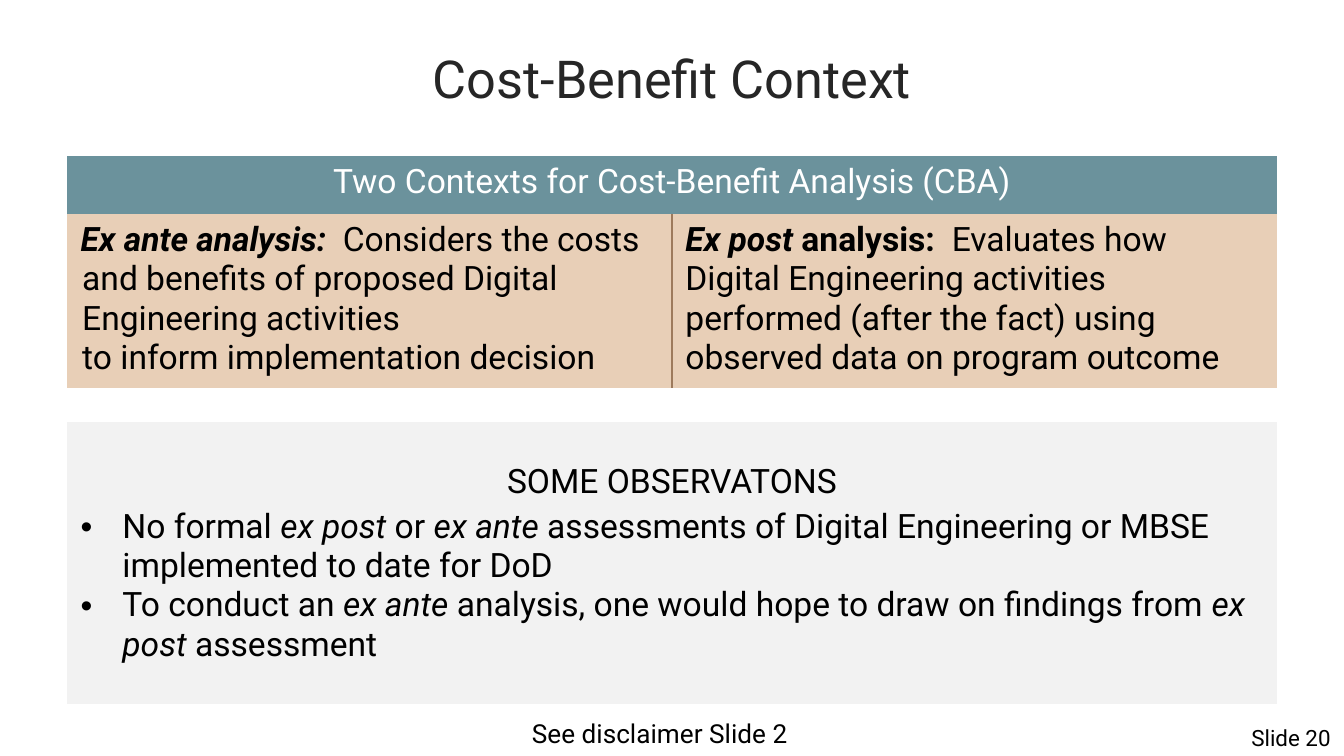
from typing import NamedTuple

from lxml.etree import SubElement
from pptx import Presentation
from pptx.dml.color import RGBColor
from pptx.enum.text import MSO_ANCHOR, PP_ALIGN
from pptx.oxml.ns import qn
from pptx.util import Cm, Pt

BLACK = RGBColor(0x00, 0x00, 0x00)
CHARCOAL = RGBColor(0x26, 0x26, 0x26)
WHITE = RGBColor(0xFF, 0xFF, 0xFF)
TEAL = RGBColor(0x6B, 0x92, 0x9C)
SAND = RGBColor(0xE8, 0xCF, 0xB7)
BROWN = RGBColor(0x9D, 0x7A, 0x5C)
PALE_GREY = RGBColor(0xF2, 0xF2, 0xF2)

FONT = "Roboto"
BODY_SIZE = 18
BULLET_INDENT = Cm(0.79)
COLUMN_WIDTH = Cm(11.43)
ROW_HEIGHTS = [Cm(1.09), Cm(3.23), Cm(0.64), Cm(5.33)]
NO_STYLE_NO_GRID = "{2D5ABB26-0587-4C30-8999-92F81FD0307C}"


class Part(NamedTuple):
    text: str
    bold: bool = False
    italic: bool = False


class Label(NamedTuple):
    text: str
    left: float
    top: float
    width: float
    height: float
    size: int
    align: PP_ALIGN
    color: RGBColor = BLACK
    anchor: MSO_ANCHOR = MSO_ANCHOR.TOP


LABELS = [
    Label("Cost-Benefit Context", 1.27, 0, 22.86, 2.95, 28, PP_ALIGN.CENTER,
          CHARCOAL, MSO_ANCHOR.MIDDLE),
    Label("See disclaimer Slide 2", 7.21, 13.44, 10.52, 0.86, 14, PP_ALIGN.CENTER),
    Label("Slide 20", 13.89, 13.56, 11.51, 0.76, 12, PP_ALIGN.RIGHT),
]

CONTEXTS = [
    [
        Part("Ex ante analysis:  ", bold=True, italic=True),
        Part("Considers the costs and benefits of proposed Digital "
             "Engineering activities \nto inform implementation decision"),
    ],
    [
        Part("Ex post ", bold=True, italic=True),
        Part("analysis:  ", bold=True),
        Part("Evaluates how Digital Engineering activities performed "
             "(after the fact) using observed data on program outcome"),
    ],
]

OBSERVATIONS = [
    [
        Part("No formal "),
        Part("ex post ", italic=True),
        Part("or "),
        Part("ex ante ", italic=True),
        Part("assessments of Digital Engineering or MBSE implemented to date for DoD"),
    ],
    [
        Part("To conduct an "),
        Part("ex ante ", italic=True),
        Part("analysis, one would hope to draw on findings from "),
        Part("ex post ", italic=True),
        Part("assessment"),
    ],
]


def style_run(run, size: int, color: RGBColor, part: Part = Part("")) -> None:
    run.font.name = FONT
    run.font.size = Pt(size)
    run.font.color.rgb = color
    run.font.bold = part.bold
    run.font.italic = part.italic


def set_line(paragraph, text: str, size: int, color: RGBColor, align: PP_ALIGN) -> None:
    paragraph.text = text
    paragraph.alignment = align
    style_run(paragraph.runs[0], size, color)


def add_parts(paragraph, parts: list[Part]) -> None:
    """Append the parts as runs, turning newlines into line breaks."""
    for part in parts:
        for number, line in enumerate(part.text.split("\n")):
            if number:
                paragraph.add_line_break()
            run = paragraph.add_run()
            run.text = line
            style_run(run, BODY_SIZE, BLACK, part)


def set_indent(paragraph, indent: int) -> None:
    """Give the paragraph a hanging indent."""
    properties = paragraph._p.get_or_add_pPr()
    properties.set("marL", str(indent))
    properties.set("indent", str(-indent))


def add_bullet(paragraph) -> None:
    set_indent(paragraph, BULLET_INDENT)
    properties = paragraph._p.get_or_add_pPr()
    SubElement(properties, qn("a:buFont"), typeface="Arial")
    SubElement(properties, qn("a:buChar"), char="•")


def fill_cell(cell, color: RGBColor) -> None:
    cell.fill.solid()
    cell.fill.fore_color.rgb = color


def add_border(cell, side: str) -> None:
    """Draw a brown line on one side of the cell: lnL or lnR."""
    line = SubElement(cell._tc.get_or_add_tcPr(), qn(f"a:{side}"), w=str(Pt(1)))
    solid = SubElement(line, qn("a:solidFill"))
    SubElement(solid, qn("a:srgbClr"), val=str(BROWN))


def add_label(slide, label: Label) -> None:
    box = slide.shapes.add_textbox(
        Cm(label.left), Cm(label.top), Cm(label.width), Cm(label.height))
    frame = box.text_frame
    frame.word_wrap = True
    frame.vertical_anchor = label.anchor
    set_line(frame.paragraphs[0], label.text, label.size, label.color, label.align)


def add_context_table(slide) -> None:
    frame = slide.shapes.add_table(
        len(ROW_HEIGHTS), 2, Cm(1.27), Cm(2.95), 2 * COLUMN_WIDTH, sum(ROW_HEIGHTS))
    table = frame.table
    table.first_row = table.horz_banding = False
    table._tbl.tblPr.find(qn("a:tableStyleId")).text = NO_STYLE_NO_GRID
    for row, height in zip(table.rows, ROW_HEIGHTS):
        row.height = height
    for row in (0, 2, 3):
        table.cell(row, 0).merge(table.cell(row, 1))

    header = table.cell(0, 0)
    set_line(header.text_frame.paragraphs[0],
             "Two Contexts for Cost-Benefit Analysis (CBA)",
             BODY_SIZE, WHITE, PP_ALIGN.CENTER)
    fill_cell(header, TEAL)

    for column, (parts, side) in enumerate(zip(CONTEXTS, ("lnR", "lnL"))):
        context = table.cell(1, column)
        add_parts(context.text_frame.paragraphs[0], parts)
        add_border(context, side)
        fill_cell(context, SAND)
    set_indent(table.cell(1, 0).text_frame.paragraphs[0], Cm(0.03))

    for column in range(2):
        gap = table.cell(2, column)
        gap.fill.background()
        # Small text keeps the empty row from growing
        SubElement(gap.text_frame.paragraphs[0]._p, qn("a:endParaRPr"), sz="800")

    summary = table.cell(3, 0)
    summary.vertical_anchor = MSO_ANCHOR.MIDDLE
    fill_cell(summary, PALE_GREY)
    heading = summary.text_frame.paragraphs[0]
    set_line(heading, "SOME OBSERVATONS", BODY_SIZE, BLACK, PP_ALIGN.CENTER)
    heading.space_after = Pt(3)
    for parts in OBSERVATIONS:
        observation = summary.text_frame.add_paragraph()
        add_parts(observation, parts)
        add_bullet(observation)


def main() -> None:
    presentation = Presentation()
    presentation.slide_width = Cm(25.4)
    presentation.slide_height = Cm(14.29)
    slide = presentation.slides.add_slide(presentation.slide_layouts[6])
    for label in LABELS:
        add_label(slide, label)
    add_context_table(slide)
    presentation.save("out.pptx")


if __name__ == "__main__":
    main()
